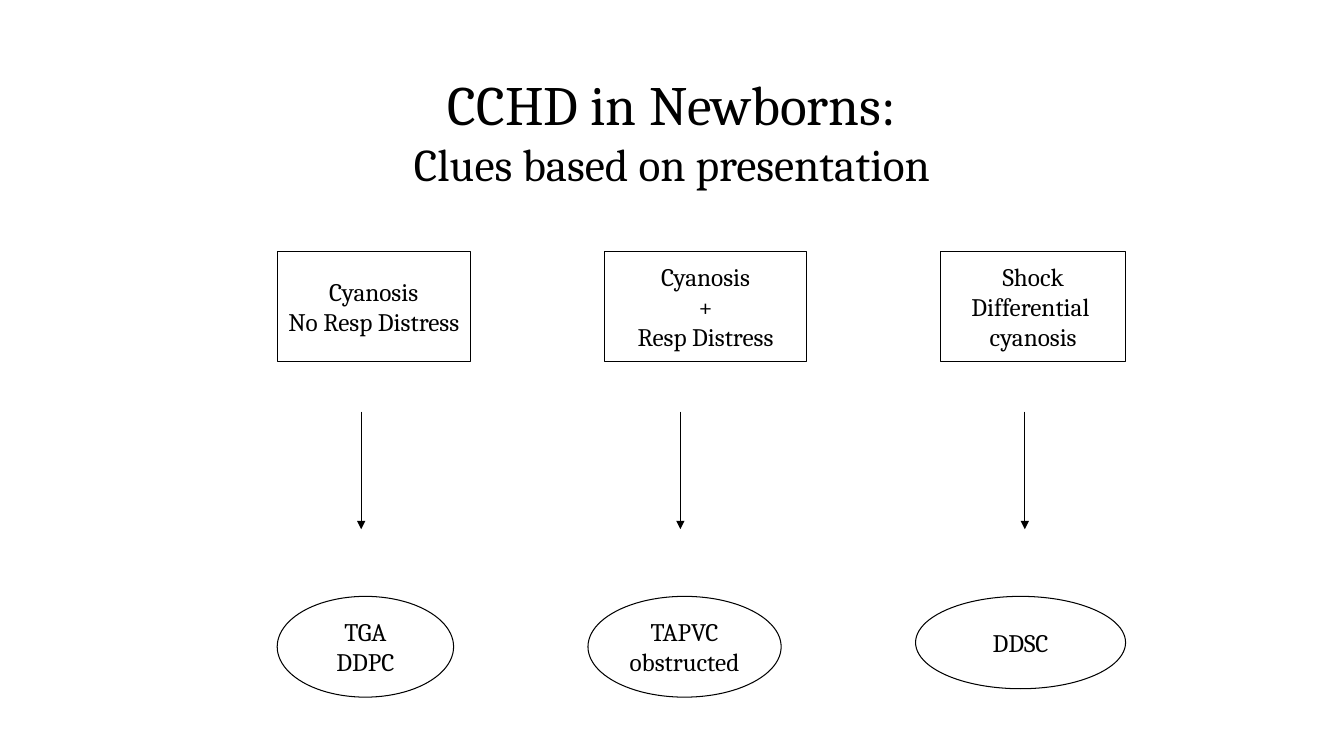
from dataclasses import dataclass

from lxml import etree
from pptx import Presentation
from pptx.dml.color import RGBColor
from pptx.enum.shapes import MSO_CONNECTOR, MSO_SHAPE
from pptx.enum.text import MSO_ANCHOR, PP_ALIGN
from pptx.oxml.ns import qn
from pptx.util import Pt

RECTANGLE, OVAL = MSO_SHAPE.RECTANGLE, MSO_SHAPE.OVAL
STRAIGHT = MSO_CONNECTOR.STRAIGHT
MIDDLE = MSO_ANCHOR.MIDDLE
CENTER = PP_ALIGN.CENTER


@dataclass(frozen=True)
class Theme:
    font: str = "Cambria"
    ink: RGBColor = RGBColor(0, 0, 0)
    paper: RGBColor = RGBColor(255, 255, 255)
    title_size: float = 39.6
    subtitle_size: float = 32.4
    body_size: float = 18
    line_width: float = 0.75


theme = Theme()

ROW_TOP = 180
BOX_HEIGHT = 78
ARROW_TOP, ARROW_BOTTOM = 294, 378
OVAL_TOP = 426

# Each pathway: box (left, width, lines), arrow x, oval (left, width, height, lines)
PATHWAYS = [
    ((198, 138, ["Cyanosis", "No Resp Distress"]), 258,
     (198, 126, 72, ["TGA", "DDPC"])),
    ((432, 144, ["Cyanosis", "+", "Resp Distress"]), 486,
     (420, 138, 72, ["TAPVC", "obstructed"])),
    ((672, 132, ["Shock", "Differential ", "cyanosis"]), 732,
     (654, 150, 66, ["DDSC"])),
]


def add_node(kind, left, top, width, height, lines):
    """Add an outlined shape with one centred paragraph per line."""
    shape = slide.shapes.add_shape(kind, Pt(left), Pt(top), Pt(width), Pt(height))
    shape.shadow.inherit = False
    shape.fill.solid()
    shape.fill.fore_color.rgb = theme.paper
    shape.line.color.rgb = theme.ink
    shape.line.width = Pt(theme.line_width)
    frame = shape.text_frame
    frame.word_wrap = False
    frame.vertical_anchor = MIDDLE
    frame.text = "\n".join(lines)
    for paragraph in frame.paragraphs:
        paragraph.alignment = CENTER
        paragraph.font.name = theme.font
        paragraph.font.size = Pt(theme.body_size)
        paragraph.font.color.rgb = theme.ink


def add_down_arrow(x):
    arrow = slide.shapes.add_connector(
        STRAIGHT, Pt(x), Pt(ARROW_TOP), Pt(x), Pt(ARROW_BOTTOM))
    arrow.line.color.rgb = theme.ink
    arrow.line.width = Pt(theme.line_width)
    etree.SubElement(arrow.line._get_or_add_ln(), qn("a:tailEnd"), type="triangle")
    etree.SubElement(arrow._element.spPr, qn("a:effectLst"))


presentation = Presentation()
presentation.slide_width = Pt(960)
presentation.slide_height = Pt(540)
slide = presentation.slides.add_slide(presentation.slide_layouts[6])

title = slide.shapes.add_textbox(Pt(72), Pt(48), Pt(816), Pt(90))
title.text_frame.word_wrap = True
title.text_frame.vertical_anchor = MIDDLE
heading = title.text_frame.paragraphs[0]
heading.alignment = CENTER
heading.font.name = theme.font
heading.font.color.rgb = theme.ink
main_run = heading.add_run()
main_run.text = "CCHD in Newborns:"
main_run.font.size = Pt(theme.title_size)
heading.add_line_break()
subtitle_run = heading.add_run()
subtitle_run.text = "Clues based on presentation"
subtitle_run.font.size = Pt(theme.subtitle_size)

for (box_left, box_width, signs), arrow_x, (oval_left, oval_width, oval_height, causes) in PATHWAYS:
    add_node(RECTANGLE, box_left, ROW_TOP, box_width, BOX_HEIGHT, signs)
    add_down_arrow(arrow_x)
    add_node(OVAL, oval_left, OVAL_TOP, oval_width, oval_height, causes)

presentation.save("out.pptx")
